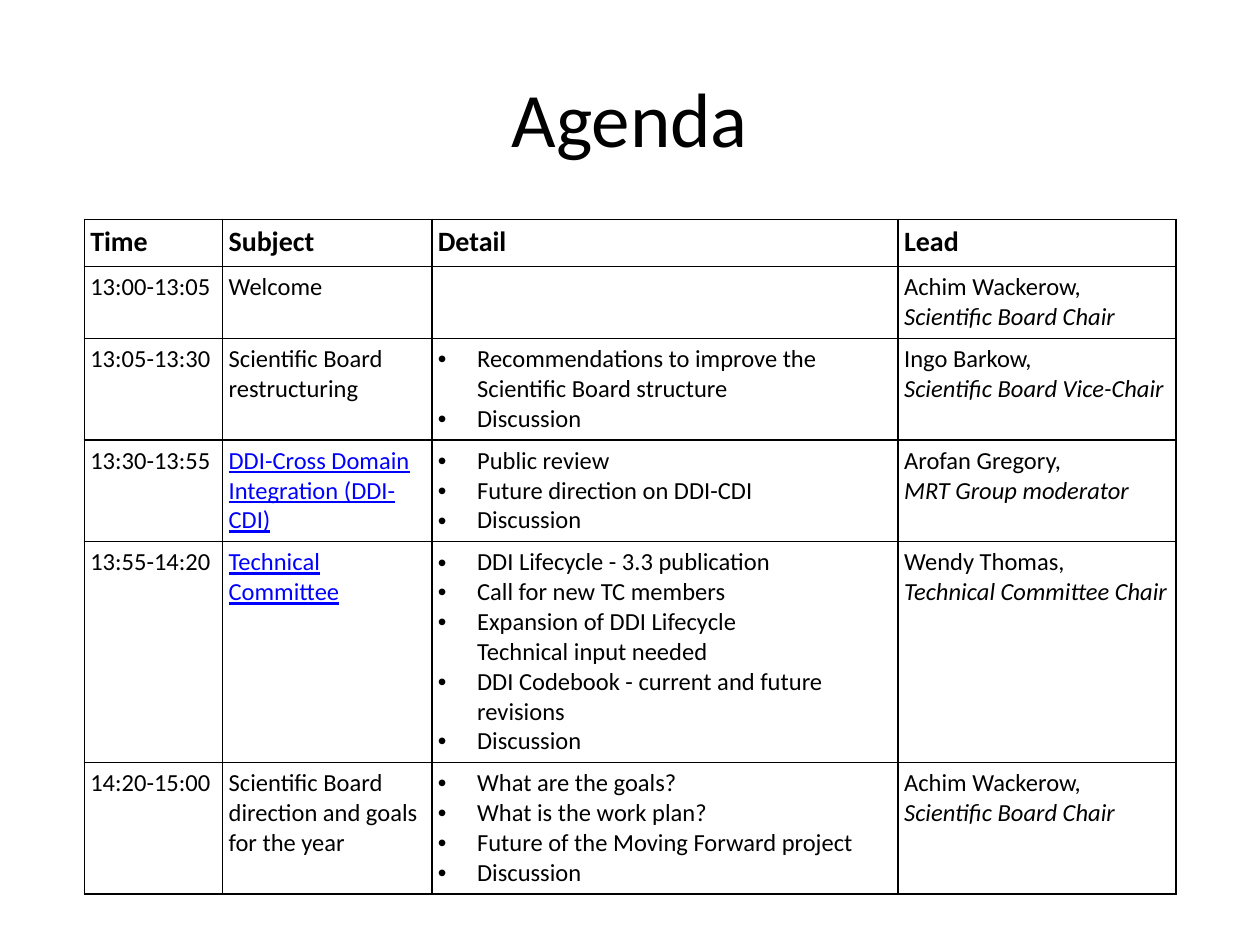
from dataclasses import dataclass

from lxml.etree import SubElement
from pptx import Presentation
from pptx.dml.color import RGBColor as Rgb
from pptx.enum.text import MSO_ANCHOR as Anchor, PP_ALIGN as Align
from pptx.oxml.ns import qn
from pptx.util import Cm, Pt


@dataclass(frozen=True)
class Theme:
    font: str = "Calibri"
    ink: str = "000000"
    link: str = "0000FF"
    paper: str = "FFFFFF"
    title: int = 44
    header: int = 16
    body: int = 14
    border: int = 1


THEME = Theme()
CELL_INSET = Cm(0.12)
BULLET_INDENT = Cm(0.79)
COLUMN_WIDTHS = [2.79, 4.22, 9.4, 5.6]
ROW_HEIGHTS = [0.95, 1.45, 2.05, 2.05, 4.45, 2.65]

HEADINGS = ["Time", "Subject", "Detail", "Lead"]
CHAIR = ("Achim Wackerow,", "Scientific Board Chair")
# Time, subject, detail points, (lead, role)
SESSIONS = [
    ("13:00-13:05", "Welcome", [], CHAIR),
    ("13:05-13:30", "Scientific Board restructuring",
     ["Recommendations to improve the Scientific Board structure",
      "Discussion"],
     ("Ingo Barkow,", "Scientific Board Vice-Chair")),
    ("13:30-13:55", "DDI-Cross Domain Integration (DDI-CDI)",
     ["Public review", "Future direction on DDI-CDI", "Discussion"],
     ("Arofan Gregory,", "MRT Group moderator")),
    ("13:55-14:20", "Technical Committee",
     ["DDI Lifecycle - 3.3 publication",
      "Call for new TC members",
      "Expansion of DDI Lifecycle\nTechnical input needed",
      "DDI Codebook - current and future revisions",
      "Discussion"],
     ("Wendy Thomas,", "Technical Committee Chair")),
    ("14:20-15:00", "Scientific Board direction and goals for the year",
     ["What are the goals?", "What is the work plan?",
      "Future of the Moving Forward project", "Discussion"],
     CHAIR),
]
LINKED_SUBJECTS = {"DDI-Cross Domain Integration (DDI-CDI)",
                   "Technical Committee"}


def add_text(paragraph, text, size, color=THEME.ink, **styles):
    """Add text run by run, with a line break at each newline."""
    for index, line in enumerate(text.split("\n")):
        if index:
            paragraph.add_line_break()
        run = paragraph.add_run()
        run.text = line
        font = run.font
        font.name, font.size = THEME.font, Pt(size)
        font.color.rgb = Rgb.from_string(color)
        for style, value in styles.items():
            setattr(font, style, value)


def add_bullet(paragraph):
    props = paragraph._p.get_or_add_pPr()
    props.set("marL", str(BULLET_INDENT))
    props.set("indent", str(-BULLET_INDENT))
    SubElement(props, qn("a:buFont"), typeface="Arial")
    SubElement(props, qn("a:buChar"), char="•")


def format_cell(cell):
    cell.margin_left = cell.margin_right = CELL_INSET
    cell.margin_top = cell.margin_bottom = CELL_INSET
    cell.vertical_anchor = Anchor.TOP
    # Borders come before the fill
    props = cell._tc.get_or_add_tcPr()
    for side in ("lnL", "lnR", "lnT", "lnB"):
        line = SubElement(props, qn(f"a:{side}"), w=str(Pt(THEME.border)))
        fill = SubElement(line, qn("a:solidFill"))
        SubElement(fill, qn("a:srgbClr"), val=THEME.ink)
    cell.fill.solid()
    cell.fill.fore_color.rgb = Rgb.from_string(THEME.paper)


def paragraphs(cell, count):
    frame = cell.text_frame
    return [frame.paragraphs[0]] + [frame.add_paragraph()
                                    for _ in range(count - 1)]


def fill_session(cells, session):
    time, subject, points, (lead, role) = session
    time_cell, subject_cell, detail_cell, lead_cell = cells
    add_text(paragraphs(time_cell, 1)[0], time, THEME.body)

    linked = subject in LINKED_SUBJECTS
    add_text(paragraphs(subject_cell, 1)[0], subject, THEME.body,
             THEME.link if linked else THEME.ink, underline=linked)

    for paragraph, point in zip(paragraphs(detail_cell, len(points)), points):
        add_bullet(paragraph)
        add_text(paragraph, point, THEME.body)

    lead_line, role_line = paragraphs(lead_cell, 2)
    add_text(lead_line, lead, THEME.body)
    add_text(role_line, role, THEME.body, italic=True)


def place_title(slide, left, top, width, height):
    title = slide.shapes.title
    title.left, title.top, title.width, title.height = left, top, width, height
    title.text_frame.vertical_anchor = Anchor.MIDDLE
    heading = title.text_frame.paragraphs[0]
    heading.alignment = Align.CENTER
    add_text(heading, "Agenda", THEME.title)


def place_agenda(slide, left, top, width, height):
    agenda = slide.shapes.add_table(len(ROW_HEIGHTS), len(COLUMN_WIDTHS),
                                    left, top, width, height).table
    agenda.first_row = agenda.horz_banding = False
    # Share the box out by the column and row proportions
    for column, share in zip(agenda.columns, COLUMN_WIDTHS):
        column.width = int(width * share / sum(COLUMN_WIDTHS))
    for row, share in zip(agenda.rows, ROW_HEIGHTS):
        row.height = int(height * share / sum(ROW_HEIGHTS))
    for cell in agenda.iter_cells():
        format_cell(cell)

    header, *session_rows = agenda.rows
    for cell, heading in zip(header.cells, HEADINGS):
        add_text(paragraphs(cell, 1)[0], heading, THEME.header, bold=True)
    for row, session in zip(session_rows, SESSIONS):
        fill_session(row.cells, session)


def main():
    deck = Presentation()
    deck.slide_width, deck.slide_height = Cm(25.4), Cm(19.05)
    slide = deck.slides.add_slide(deck.slide_layouts[5])
    place_title(slide, Cm(1.27), Cm(0.76), Cm(22.86), Cm(3.18))
    place_agenda(slide, Cm(1.7), Cm(4.42),
                 Cm(sum(COLUMN_WIDTHS)), Cm(sum(ROW_HEIGHTS)))
    deck.save("out.pptx")


if __name__ == "__main__":
    main()
